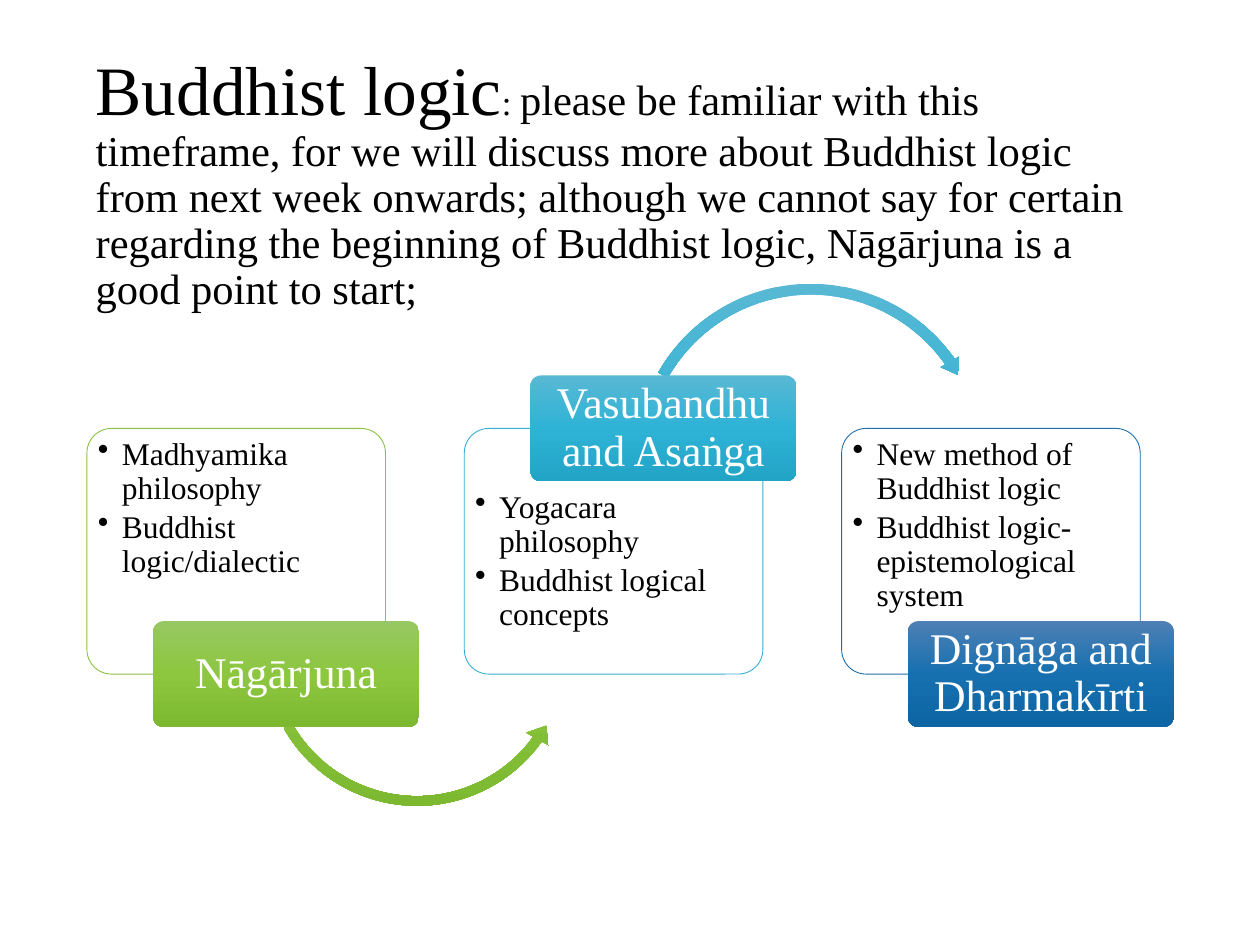
from copy import deepcopy
from dataclasses import dataclass

from lxml.etree import SubElement
from pptx import Presentation
from pptx.dml.color import RGBColor
from pptx.enum.shapes import MSO_SHAPE
from pptx.enum.text import MSO_ANCHOR, MSO_AUTO_SIZE, PP_ALIGN
from pptx.oxml.ns import qn
from pptx.util import Inches, Pt


@dataclass(frozen=True)
class Theme:
    font: str = "Times New Roman"
    ink: str = "000000"
    paper: str = "FFFFFF"
    heading: float = 39.6
    colon: float = 19.8
    subtitle: float = 24.3
    item: float = 18
    tag: float = 25
    spacing: float = 0.9
    # Outline colour, then gradient from top to bottom
    green: tuple = ("8BC145", "98C862", "8CC73F", "7DB831")
    cyan: tuple = ("36AFCE", "59B8D4", "2EB3D6", "21A4C6")
    blue: tuple = ("1D6FA9", "4E80B5", "1670B0", "0D65A3")


class Deck:
    """Places elements on a grid of 100 columns by 75 rows."""

    def __init__(self, theme):
        self.theme = theme
        self.prs = Presentation()
        self.prs.slide_width, self.prs.slide_height = Inches(10), Inches(7.5)
        self.s = None

    def add_slide(self):
        self.s = self.prs.slides.add_slide(self.prs.slide_layouts[5])

    def box(self, *cells):
        unit = self.prs.slide_width / 100
        return [round(c * unit) for c in cells]

    def style(self, p, size, color):
        p.font.name, p.font.size = self.theme.font, Pt(size)
        p.font.color.rgb = RGBColor.from_string(color)
        p.line_spacing = self.theme.spacing

    def frame(self, sp, insets, anchor):
        tf = sp.text_frame
        tf.word_wrap, tf.vertical_anchor = True, anchor
        tf.margin_left = tf.margin_right = Inches(insets[0])
        tf.margin_top = tf.margin_bottom = Inches(insets[1])
        return tf

    def title(self, cells, runs):
        sp = self.s.shapes.title
        sp.left, sp.top, sp.width, sp.height = self.box(*cells)
        tf = self.frame(sp, (0.1, 0.05), MSO_ANCHOR.MIDDLE)
        tf.auto_size = MSO_AUTO_SIZE.NONE
        p = tf.paragraphs[0]
        self.style(p, self.theme.subtitle, self.theme.ink)
        p.alignment = PP_ALIGN.LEFT
        for text, size in runs:
            r = p.add_run()
            r.text, r.font.size = text, Pt(size)

    def shape(self, kind, cells, adjustments):
        sp = self.s.shapes.add_shape(kind, *self.box(*cells))
        sp.shadow.inherit = False
        for i, value in enumerate(adjustments):
            sp.adjustments[i] = value
        return sp

    def gradient(self, sp, colors):
        sp.line.fill.background()
        sp.fill.gradient()
        sp.fill.gradient_angle = 270
        stop_list = sp._element.spPr.find(qn("a:gradFill")).find(qn("a:gsLst"))
        stop_list.append(deepcopy(stop_list[0]))
        for i, (stop, color) in enumerate(zip(sp.fill.gradient_stops, colors)):
            stop.position = i / 2
            stop.color.rgb = RGBColor.from_string(color)

    def card(self, cells, outline, items, top_inset):
        sp = self.shape(MSO_SHAPE.ROUNDED_RECTANGLE, cells, [0.1])
        sp.fill.solid()
        sp.fill.fore_color.rgb = RGBColor.from_string(self.theme.paper)
        color = sp._element.spPr.find(qn("a:solidFill"))[0]
        SubElement(color, qn("a:alpha"), val="90000")
        sp.line.color.rgb = RGBColor.from_string(outline)
        sp.line.width = Pt(0.5)
        tf = self.frame(sp, (0.03, 0.02), MSO_ANCHOR.TOP)
        tf.margin_top = Inches(top_inset)
        for i, item in enumerate(items):
            p = tf.add_paragraph() if i else tf.paragraphs[0]
            p.text, p.alignment = item, PP_ALIGN.LEFT
            self.style(p, self.theme.item, self.theme.ink)
            p.space_after = Pt(0.15 * self.theme.item)
            # Hanging bullet
            pPr = p._p.get_or_add_pPr()
            pPr.set("marL", str(Inches(0.19)))
            pPr.set("indent", str(-Inches(0.19)))
            bullet = pPr.makeelement(qn("a:buChar"), {"char": "•"})
            pPr.find(qn("a:spcAft")).addnext(bullet)

    def tag(self, cells, colors, text):
        sp = self.shape(MSO_SHAPE.ROUNDED_RECTANGLE, cells, [0.1])
        self.gradient(sp, colors)
        p = self.frame(sp, (0.05, 0.03), MSO_ANCHOR.MIDDLE).paragraphs[0]
        p.text, p.alignment = text, PP_ALIGN.CENTER
        self.style(p, self.theme.tag, self.theme.paper)

    def arc(self, kind, cells, adjustments, colors):
        self.gradient(self.shape(kind, cells, adjustments), colors)


def main():
    t = Theme()
    deck = Deck(t)
    deck.add_slide()

    # Title
    deck.title((6.6, 7.4, 86.2, 14.5), [
        ("Buddhist logic", t.heading),
        (": ", t.colon),
        ("please be familiar with this timeframe, for we will discuss more "
         "about Buddhist logic from next week onwards; although we cannot say "
         "for certain regarding the beginning of Buddhist logic, Nāgārjuna is "
         "a good point to start;", t.subtitle),
    ])

    # Stages: name, colours, list, whether the tag sits above, arrow onwards
    stages = [
        ("Nāgārjuna", t.green,
         ["Madhyamika philosophy", "Buddhist logic/dialectic"], False,
         (MSO_SHAPE.LEFT_CIRCULAR_ARROW, (20.3, 39, 25.6, 25.6),
          [0.03, 3.63, 21.38, 90.25, 0.04])),
        ("Vasubandhu and Asaṅga", t.cyan,
         ["Yogacara philosophy", "Buddhist logical concepts"], True,
         (MSO_SHAPE.CIRCULAR_ARROW, (50, 22.1, 28.7, 28.7),
          [0.03, 3.22, 195.02, 125.76, 0.03])),
        ("Dignāga and Dharmakīrti", t.blue,
         ["New method of Buddhist logic",
          "Buddhist logic-epistemological system"], False, None),
    ]
    left, top, pitch = 6.9, 34, 29.95
    for i, (name, colors, items, tag_above, arrow) in enumerate(stages):
        x = left + i * pitch
        outline, *shades = colors
        deck.card((x, top, 23.7, 19.5), outline, items,
                  0.44 if tag_above else 0.02)
        if arrow:
            deck.arc(*arrow, shades)
        tag_top = top - 4.2 if tag_above else top + 15.3
        deck.tag((x + 5.25, tag_top, 21.1, 8.4), shades, name)

    deck.prs.save("out.pptx")


if __name__ == "__main__":
    main()
